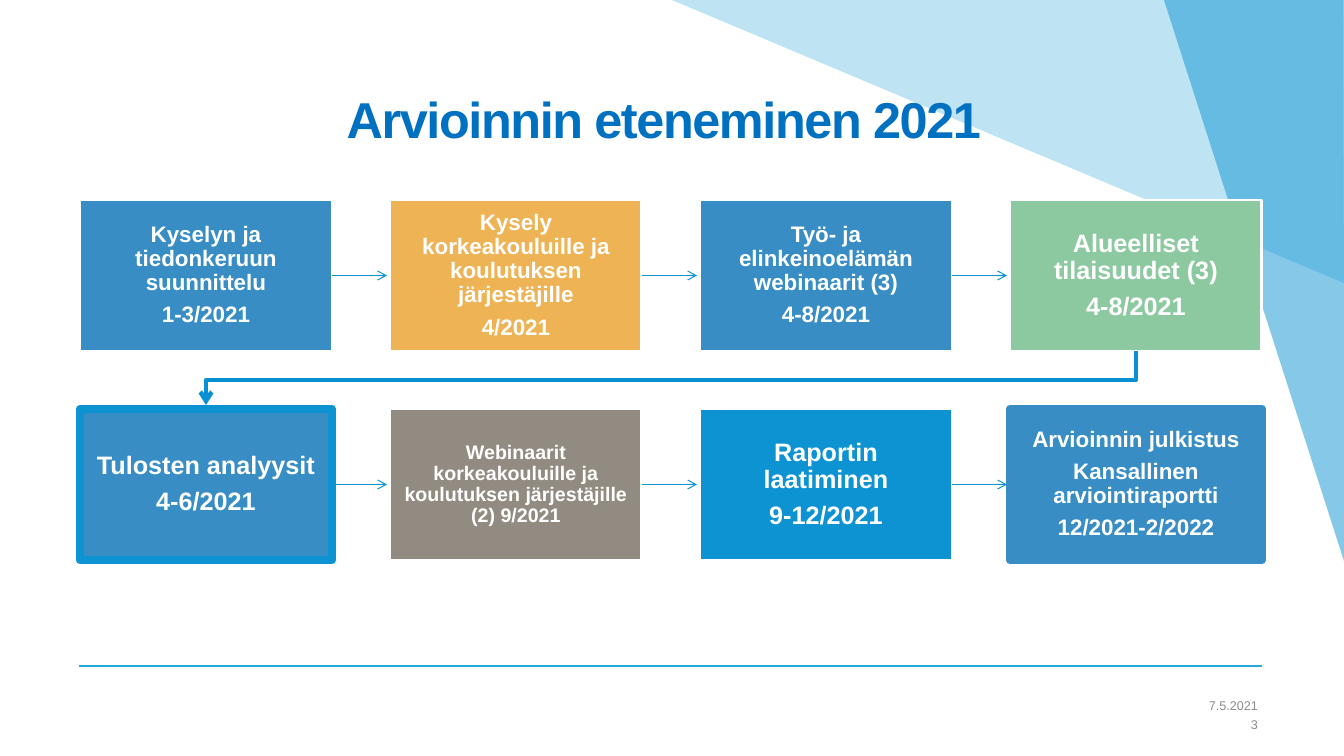
from pptx import Presentation
from pptx.dml.color import RGBColor
from pptx.enum.shapes import MSO_CONNECTOR, MSO_SHAPE
from pptx.enum.text import MSO_ANCHOR, PP_ALIGN
from pptx.oxml.ns import qn
from pptx.util import Pt
from lxml import etree

EMU_PER_PX = 12192000 / 1344
RECT, STRAIGHT = MSO_SHAPE.RECTANGLE, MSO_CONNECTOR.STRAIGHT
TOP, MIDDLE = MSO_ANCHOR.TOP, MSO_ANCHOR.MIDDLE
CENTER, RIGHT = PP_ALIGN.CENTER, PP_ALIGN.RIGHT
RIGHT_SIDE = 3
FONT = "Arial"
BLUE, STEEL, WHITE, GRAY = "0D93D2", "378DC4", "FFFFFF", "8C8C8C"
BOX_W, BOX_H, COL_STEP, ARROW_LEN = 252, 151, 310, 55
BOX_LEFT, ROW_TOPS = 80, (200, 409)

STEPS = [
    [
        (["Kyselyn ja tiedonkeruun suunnittelu", "1-3/2021"], 16, STEEL, WHITE, 2),
        (["Kysely korkeakouluille ja koulutuksen järjestäjille", "4/2021"],
         16, "EDB354", WHITE, 2),
        (["Työ- ja elinkeinoelämän webinaarit (3)", "4-8/2021"], 16, STEEL, WHITE, 2),
        (["Alueelliset tilaisuudet (3)", "4-8/2021"], 18, "8DC9A0", WHITE, 2),
    ],
    [
        (["Tulosten analyysit", "4-6/2021"], 18, STEEL, BLUE, 6),
        (["Webinaarit korkeakouluille ja koulutuksen järjestäjille (2) 9/2021"],
         14, "928B81", WHITE, 2),
        (["Raportin laatiminen", "9-12/2021"], 18, BLUE, WHITE, 2),
        (["Arvioinnin julkistus", "Kansallinen arviointiraportti", "12/2021-2/2022"],
         16, STEEL, STEEL, 6),
    ],
]


def px(n):
    """Turn pixels into EMU."""
    return round(n * EMU_PER_PX)


def rgb(value):
    """Turn a hex string into a colour."""
    return RGBColor.from_string(value)


def set_line(shape, color, width, arrow=False):
    """Set the outline, with an open arrowhead at its end if wanted."""
    shape.line.color.rgb = rgb(color)
    shape.line.width = Pt(width)
    if arrow:
        ln = shape._element.spPr.find(qn("a:ln"))
        etree.SubElement(ln, qn("a:tailEnd"), type="arrow")


def write(shape, lines, size, color, bold=False, align=CENTER, anchor=MIDDLE,
          insets=(0, 0, 0, 0), leading=1.0, after=0, spacing=None):
    """Fill a shape with formatted paragraphs."""
    tf = shape.text_frame
    tf.word_wrap = True
    tf.vertical_anchor = anchor
    tf.margin_left, tf.margin_top, tf.margin_right, tf.margin_bottom = map(px, insets)
    for i, text in enumerate(lines):
        p = tf.add_paragraph() if i else tf.paragraphs[0]
        p.alignment, p.line_spacing, p.space_after = align, leading, Pt(after)
        r = p.add_run()
        r.text = text
        r.font.name, r.font.size, r.font.bold = FONT, Pt(size), bold
        r.font.color.rgb = rgb(color)
        if spacing is not None:
            r._r.get_or_add_rPr().set("spc", str(spacing * 100))


def add_label(s, x, y, w, h, text, size, color, **fmt):
    """Add a text box with one paragraph."""
    write(s.shapes.add_textbox(px(x), px(y), px(w), px(h)), [text], size, color, **fmt)


def add_outline(s, points, close):
    """Add a freeform through the given pixel points."""
    builder = s.shapes.build_freeform(*points[0], scale=EMU_PER_PX)
    builder.add_line_segments(points[1:], close=close)
    sp = builder.convert_to_shape()
    sp.shadow.inherit = False
    return sp


def add_facet(s, points, color, alpha):
    """Add a translucent background facet."""
    sp = add_outline(s, points, True)
    sp.fill.solid()
    sp.fill.fore_color.rgb = rgb(color)
    sp.line.fill.background()
    clr = sp._element.spPr.find(qn("a:solidFill"))[0]
    etree.SubElement(clr, qn("a:alpha"), val=str(alpha * 1000))


def add_line(s, x1, y1, x2, y2, color, width, arrow=False):
    """Add a straight connector without shadow."""
    c = s.shapes.add_connector(STRAIGHT, px(x1), px(y1), px(x2), px(y2))
    set_line(c, color, width, arrow)
    etree.SubElement(c._element.spPr, qn("a:effectLst"))
    return c


def add_step(s, x, y, lines, size, fill, border, width):
    """Add one process step box."""
    sp = s.shapes.add_shape(RECT, px(x), px(y), px(BOX_W), px(BOX_H))
    sp.shadow.inherit = False
    sp.fill.solid()
    sp.fill.fore_color.rgb = rgb(fill)
    set_line(sp, border, width)
    write(sp, lines, size, WHITE, bold=True, insets=(12, 12, 12, 12),
          leading=0.9, after=round(0.35 * size, 1))
    return sp


def add_process(s):
    """Add both rows of steps with their arrows."""
    for y, row in zip(ROW_TOPS, STEPS):
        for col, step in enumerate(row):
            x = BOX_LEFT + col * COL_STEP
            box = add_step(s, x, y, *step)
            if col < len(row) - 1:
                end, mid = x + BOX_W, y + BOX_H / 2
                arrow = add_line(s, end, mid, end + ARROW_LEN, mid, BLUE, 0.75, True)
                arrow.begin_connect(box, RIGHT_SIDE)
    first = BOX_LEFT + BOX_W // 2
    last = first + 3 * COL_STEP
    turn = add_outline(s, [(last, 351), (last, 380), (first, 380), (first, 405)], False)
    turn.fill.background()
    set_line(turn, "0891D2", 3, True)


def main():
    """Build the slide and save it."""
    prs = Presentation()
    prs.slide_width, prs.slide_height = px(1344), px(756)
    s = prs.slides.add_slide(prs.slide_layouts[6])
    add_line(s, 79, 666, 1262, 666, "28A7DA", 1)
    add_facet(s, [(672, 0), (1344, 283), (1343, 0)], "28A7DA", 30)
    add_facet(s, [(1164, 0), (1344, 561), (1344, 0)], BLUE, 50)
    add_label(s, 73, 97, 1182, 50, "Arvioinnin eteneminen 2021", 36, "0070C0",
              bold=True, anchor=TOP, leading=0.85, spacing=-1)
    for y, h, text in ((695, 20, "7.5.2021"), (715, 18, "3")):
        add_label(s, 726, y, 532, h, text, 9, GRAY, align=RIGHT, insets=(10, 5, 0, 5))
    add_process(s)
    prs.save("out.pptx")


if __name__ == "__main__":
    main()
